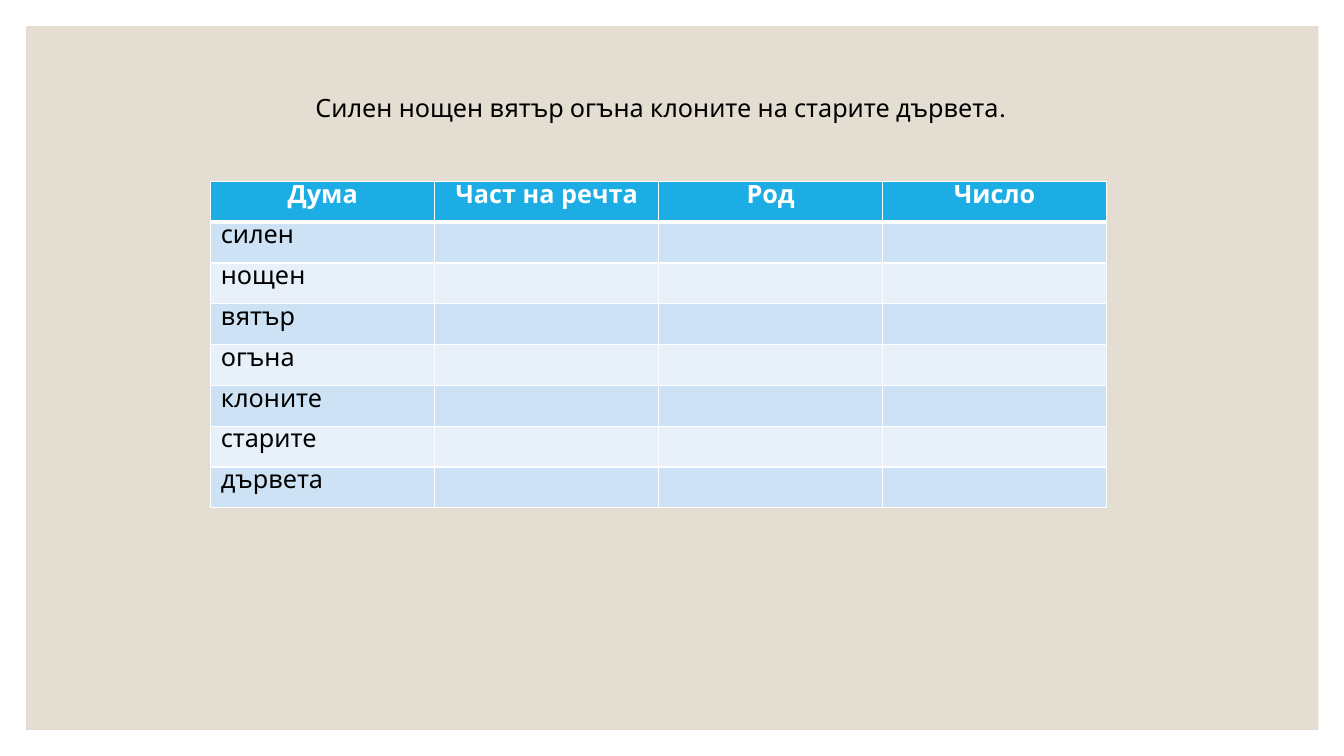
from lxml.etree import SubElement
from pptx import Presentation
from pptx.dml.color import RGBColor
from pptx.enum.shapes import MSO_SHAPE
from pptx.enum.text import MSO_ANCHOR, PP_ALIGN
from pptx.oxml.ns import qn
from pptx.util import Inches, Pt

COLORS = {
    "page": "FFFFFF",
    "panel": "E3DED1",
    "header": "1CADE4",
    "odd": "CDE3F5",
    "even": "E8F1FA",
    "ink": "000000",
    "rule": "FFFFFF",
}
FONT = "League Spartan"
WIDTH, HEIGHT = 13.33, 7.5
SENTENCE = "Силен нощен вятър огъна клоните на старите дървета."
HEADINGS = ["Дума", "Част на речта", "Род", "Число"]
WORDS = ["силен", "нощен", "вятър", "огъна", "клоните", "старите", "дървета"]


def rgb(name):
    return RGBColor.from_string(COLORS[name])


def percent(left, top, width, height):
    return (Inches(WIDTH * left / 100), Inches(HEIGHT * top / 100),
            Inches(WIDTH * width / 100), Inches(HEIGHT * height / 100))


def write(frame, text, color="ink", size=18, bold=False, align=PP_ALIGN.LEFT, spacing=0.9):
    paragraph = frame.paragraphs[0]
    paragraph.alignment = align
    paragraph.line_spacing = spacing
    run = paragraph.add_run()
    run.text = text
    run.font.name = FONT
    run.font.size = Pt(size)
    run.font.bold = bold
    run.font.color.rgb = rgb(color)


class SlideBuilder:
    def __init__(self, slide):
        self.slide = slide
        background = slide.background.fill
        background.solid()
        background.fore_color.rgb = rgb("page")

    def panel(self, *area):
        panel = self.slide.shapes.add_shape(MSO_SHAPE.RECTANGLE, *percent(*area))
        panel.shadow.inherit = False
        panel.fill.solid()
        panel.fill.fore_color.rgb = rgb("panel")
        panel.line.fill.background()

    def sentence(self, text, *area):
        box = self.slide.shapes.add_textbox(*percent(*area))
        box.text_frame.word_wrap = True
        write(box.text_frame, text, align=PP_ALIGN.CENTER, spacing=1.0)

    def borders(self, cell, **widths):
        properties = cell._tc.get_or_add_tcPr()
        for position, side in enumerate(("L", "R", "T", "B")):
            line = properties.makeelement(qn(f"a:ln{side}"), {"w": str(Pt(widths.get(side, 1)))})
            fill = SubElement(line, qn("a:solidFill"))
            SubElement(fill, qn("a:srgbClr"), val=COLORS["rule"])
            properties.insert(position, line)

    def cell(self, cell, text, fill, **style):
        cell.margin_top = cell.margin_bottom = Inches(0.05)
        cell.vertical_anchor = MSO_ANCHOR.TOP
        cell.fill.solid()
        cell.fill.fore_color.rgb = rgb(fill)
        if text:
            write(cell.text_frame, text, **style)

    def word_table(self, *area):
        rows, columns = len(WORDS) + 1, len(HEADINGS)
        table = self.slide.shapes.add_table(rows, columns, *percent(*area)).table
        for position, heading in enumerate(HEADINGS):
            self.cell(table.cell(0, position), heading, "header",
                      color="page", bold=True, align=PP_ALIGN.CENTER)
            self.borders(table.cell(0, position), B=3)
        for index, word in enumerate(WORDS, 1):
            for position in range(columns):
                cell = table.cell(index, position)
                self.cell(cell, "" if position else word, "odd" if index % 2 else "even")
                self.borders(cell, T=3 if index == 1 else 1)


def main():
    presentation = Presentation()
    presentation.slide_width = Inches(WIDTH)
    presentation.slide_height = Inches(HEIGHT)
    builder = SlideBuilder(presentation.slides.add_slide(presentation.slide_layouts[6]))
    builder.panel(1.95, 3.45, 96.15, 93.1)
    builder.sentence(SENTENCE, 14.1, 11.5, 70.2, 5.4)
    builder.word_table(15.68, 24, 66.67, 43.2)
    presentation.save("out.pptx")


if __name__ == "__main__":
    main()
